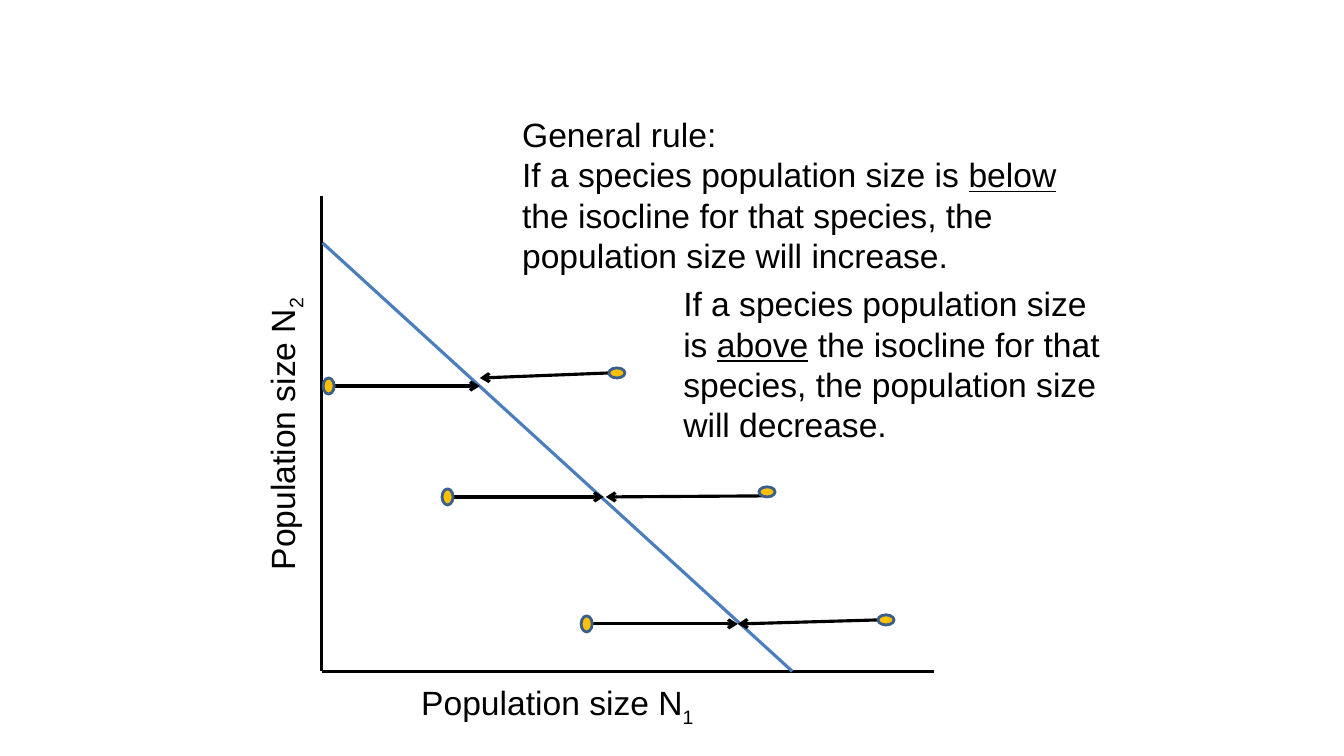
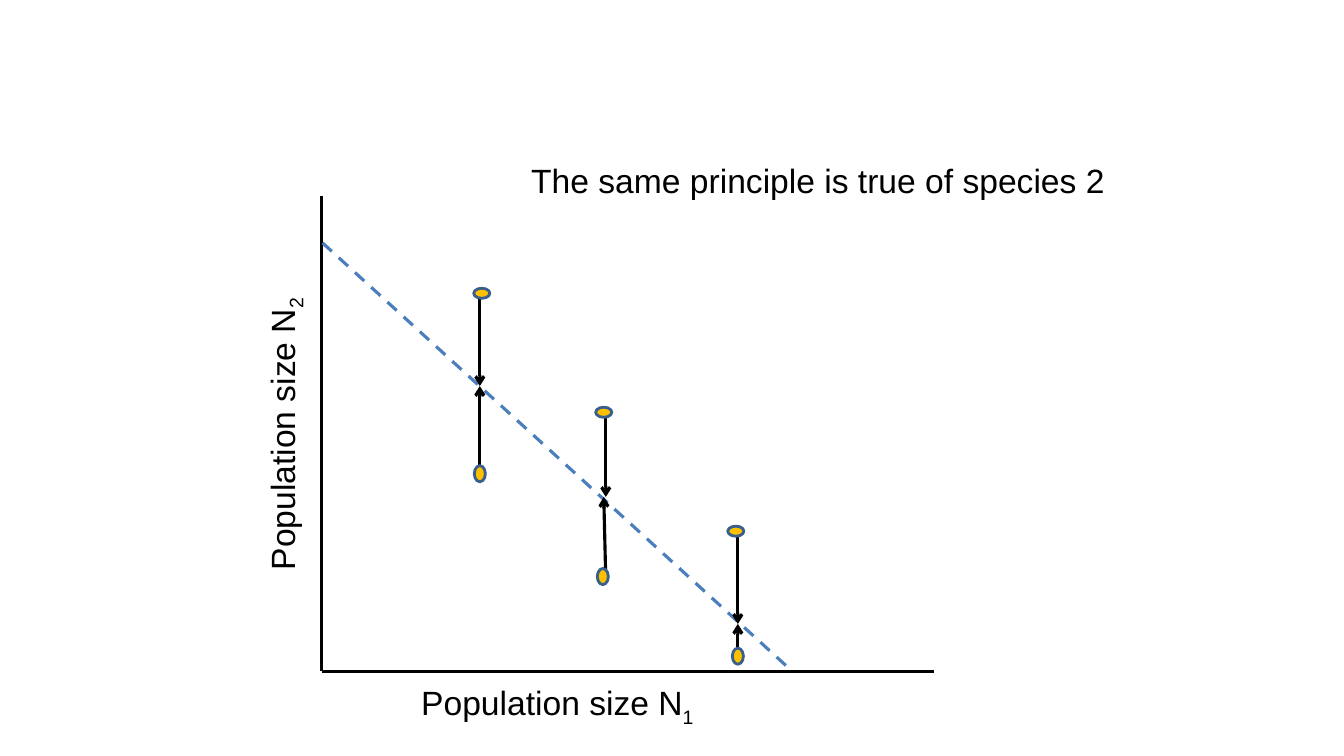
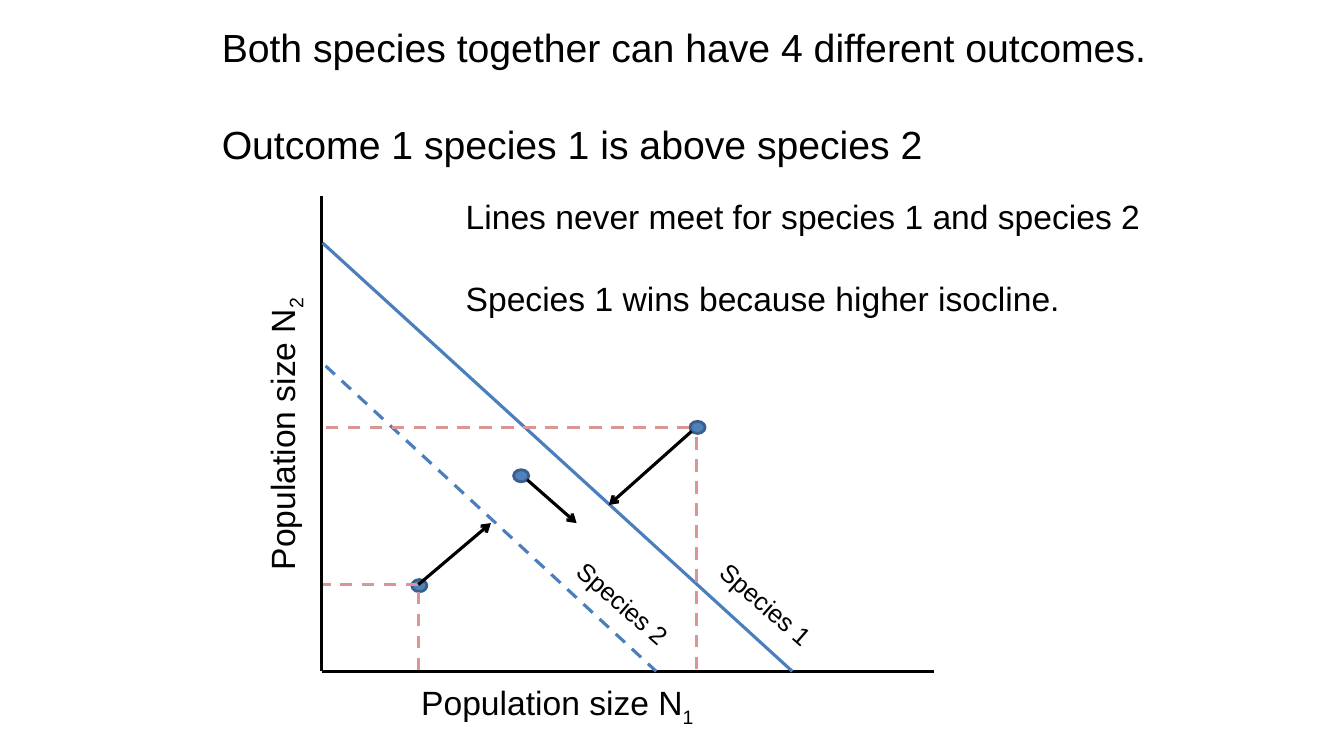
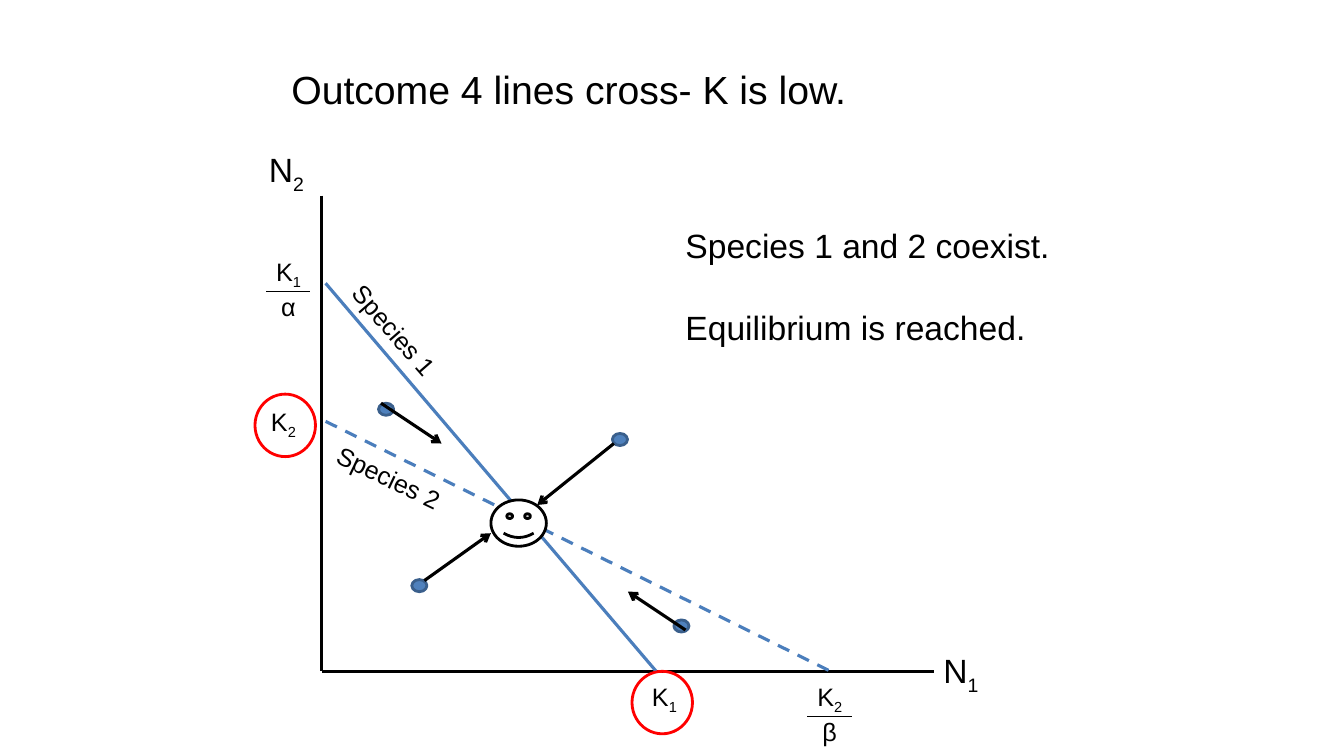
from lxml import etree
from pptx import Presentation
from pptx import util as u
from pptx.dml.color import RGBColor
from pptx.enum import dml, shapes, text
from pptx.oxml import ns

CELL = 0.1
COLUMNS, ROWS = 133.33, 75
COLORS = {
    "ink": "000000",
    "isocline": "4B7EBC",
    "guide": "D99694",
    "gold": "FFC000",
    "blue": "4F81BD",
    "outline": "3A5F8C",
    "ring": "FF0000",
    "paper": "FFFFFF",
}
DOTS = {
    "tall": (1.1, 1.6, "gold"),
    "wide": (1.6, 1, "gold"),
    "blue": (1.5, 1.2, "blue"),
}
ORIGIN = (31.9, 66.6)
AXIS_TOP, AXIS_RIGHT = 19.4, 92.7
ISOCLINE = ((32, 24.1), (78.6, 66.6))


def cells(count):
    return u.Inches(count * CELL)


def color(name):
    return RGBColor.from_string(COLORS[name])


def write(shape, paragraphs, size=24, gap=0, wrap=False):
    frame = shape.text_frame
    frame.word_wrap = wrap
    frame.auto_size = text.MSO_AUTO_SIZE.NONE
    frame.vertical_anchor = text.MSO_ANCHOR.TOP
    for index, runs in enumerate(paragraphs):
        paragraph = frame.add_paragraph() if index else frame.paragraphs[0]
        paragraph.alignment = text.PP_ALIGN.LEFT
        paragraph.space_before = u.Pt(gap if index else 0)
        for content, style in runs:
            run = paragraph.add_run()
            run.text = content
            run.font.name = "Arial"
            run.font.size = u.Pt(size)
            run.font.color.rgb = color("ink")
            if style == "underline":
                run.font.underline = True
            if style == "subscript":
                run._r.get_or_add_rPr().set("baseline", "-25000")


def plain(*lines):
    return [[(line, None)] for line in lines]


def indexed(name, number):
    return [[(name, None), (number, "subscript")]]


def rule(side, effect):
    return [[
        ("If a species population size is ", None),
        (side, "underline"),
        (f" the isocline for that species, the population size will {effect}.", None),
    ]]


class Deck:
    def __init__(self):
        self.presentation = Presentation()
        self.presentation.slide_width = cells(COLUMNS)
        self.presentation.slide_height = cells(ROWS)
        self.slide = None

    def new_slide(self, with_body=True):
        layout = self.presentation.slide_layouts[1 if with_body else 5]
        self.slide = self.presentation.slides.add_slide(layout)

    def place(self, shape, box, paragraphs, **style):
        shape.left, shape.top, shape.width, shape.height = map(cells, box)
        write(shape, paragraphs, wrap=True, **style)

    def title(self, box, paragraphs, **style):
        self.place(self.slide.shapes.title, box, paragraphs, **style)

    def body(self, box, paragraphs, **style):
        shape = self.slide.placeholders[1]
        self.place(shape, box, paragraphs, **style)
        for paragraph in shape.text_frame.paragraphs:
            properties = paragraph._p.get_or_add_pPr()
            properties.set("marL", "0")
            properties.set("indent", "0")
            etree.SubElement(properties, ns.qn("a:buNone"))

    def label(self, box, paragraphs, rotation=0, **style):
        shape = self.slide.shapes.add_textbox(*map(cells, box))
        shape.rotation = rotation
        write(shape, paragraphs, **style)

    def line(self, start, end, stroke="ink", width=2.25, dashed=False, arrow=False):
        connector = self.slide.shapes.add_connector(
            shapes.MSO_CONNECTOR.STRAIGHT, *map(cells, (*start, *end)))
        connector.line.color.rgb = color(stroke)
        connector.line.width = u.Pt(width)
        if dashed:
            connector.line.dash_style = dml.MSO_LINE.DASH
        if arrow:
            outline = connector.line._get_or_add_ln()
            etree.SubElement(outline, ns.qn("a:tailEnd"), type="arrow")
        etree.SubElement(connector._element.spPr, ns.qn("a:effectLst"))

    def arrows(self, *pairs):
        for start, end in pairs:
            self.line(start, end, arrow=True)

    def shape(self, kind, box, fill, stroke):
        shape = self.slide.shapes.add_shape(kind, *map(cells, box))
        shape.shadow.inherit = False
        if fill:
            shape.fill.solid()
            shape.fill.fore_color.rgb = color(fill)
        else:
            shape.fill.background()
        shape.line.color.rgb = color(stroke)
        shape.line.width = u.Pt(2)

    def dots(self, kind, *centers):
        width, height, fill = DOTS[kind]
        for x, y in centers:
            box = (x - width / 2, y - height / 2, width, height)
            self.shape(shapes.MSO_SHAPE.OVAL, box, fill, "outline")

    def axes(self):
        self.line((ORIGIN[0], AXIS_TOP), ORIGIN)
        self.line(ORIGIN, (AXIS_RIGHT, ORIGIN[1]))

    def population_axes(self):
        self.axes()
        self.label((13.2, 40.3, 29.5, 5), indexed("Population size N", "2"), rotation=270)
        self.label((40.8, 67.2, 29.5, 5), indexed("Population size N", "1"))

    def isocline(self, start, end, dashed=False):
        self.line(start, end, stroke="isocline", dashed=dashed)

    def species(self, number, left, top, rotation):
        self.label((left, top, 13.1, 4), plain(f"Species {number}"),
                   rotation=rotation, size=18)

    def capacity(self, number, left, top, divisor=None):
        self.label((left, top, 4.6, 4), indexed("K", number), size=18)
        if divisor:
            bar = top + 4
            self.line((left, bar), (left + 4.4, bar), width=0.75)
            self.label((left + 0.5, bar - 0.5, 3.5, 4), plain(divisor), size=18)

    def ring(self, left, top):
        self.shape(shapes.MSO_SHAPE.OVAL, (left, top, 6, 6.2), None, "ring")


def species_one_rule(deck):
    deck.new_slide()
    deck.title((50.8, 10.8, 59.9, 5), plain("General rule:"))
    deck.body((50.8, 14.8, 59.9, 13.2), rule("below", "increase"))
    deck.place(deck.slide.shapes.add_textbox(0, 0, 0, 0),
               (66.8, 27.6, 44.1, 17.2), rule("above", "decrease"))
    deck.population_axes()
    deck.isocline(*ISOCLINE)
    deck.arrows(
        ((58.3, 61.9), (73.2, 61.9)),
        ((45, 49.3), (59.9, 49.3)),
        ((32.6, 38.3), (47.6, 38.3)),
        ((60.4, 37), (47.6, 37.5)),
        ((75.6, 49.2), (60.1, 49.3)),
        ((87.1, 61.5), (73.2, 61.9)),
    )
    deck.dots("tall", (44.4, 49.3), (58.2, 61.9), (32.6, 38.3))
    deck.dots("wide", (87.9, 61.5), (76.1, 48.8), (61.2, 37))


def species_two_rule(deck):
    deck.new_slide(with_body=False)
    deck.title((51.7, 15.4, 62, 5), plain("The same principle is true of species 2"))
    deck.population_axes()
    deck.isocline(*ISOCLINE, dashed=True)
    deck.arrows(
        ((73.2, 65.1), (73.2, 61.9)),
        ((60.1, 57.6), (59.9, 49.3)),
        ((47.6, 46.9), (47.6, 38.3)),
        ((47.6, 28.8), (47.6, 38.3)),
        ((60.1, 41.4), (60.1, 49.3)),
        ((73.2, 53.2), (73.2, 61.9)),
    )
    deck.dots("tall", (59.8, 57.2), (73.2, 65.1), (47.6, 47))
    deck.dots("wide", (73, 52.7), (59.9, 40.9), (47.8, 29.1))


def outcome_one(deck):
    deck.new_slide()
    deck.title((21, 1.8, 97, 15.1),
               plain("Both species together can have 4 different outcomes.",
                     "Outcome 1 species 1 is above species 2"), size=28, gap=36)
    deck.body((45.2, 18.9, 71.5, 13.1),
              plain("Lines never meet for species 1 and species 2",
                    "Species 1 wins because higher isocline."), gap=30)
    deck.population_axes()
    deck.isocline(*ISOCLINE)
    deck.isocline((32.3, 36.3), (65.1, 66.6), dashed=True)
    deck.species(1, 69.5, 58, 41.3)
    deck.species(2, 55.3, 57.9, 41.3)
    deck.dots("blue", (41.6, 58.1), (69.2, 42.4), (51.7, 47.2))
    for start, end in (
        ((41.5, 58.7), (41.5, 66.6)),
        ((41.5, 58), (32, 58)),
        ((69.1, 43.4), (69.1, 66.6)),
        ((68.4, 42.4), (32, 42.4)),
    ):
        deck.line(start, end, stroke="guide", dashed=True)
    deck.arrows(
        ((41.5, 58), (48.7, 51.9)),
        ((68.6, 42.8), (60.4, 50.1)),
        ((52.3, 47.6), (57.2, 51.9)),
    )


def outcome_four(deck):
    deck.new_slide()
    deck.title((27.9, 6, 60, 5.7), plain("Outcome 4 lines cross- K is low."), size=28)
    deck.body((67, 21.8, 43.7, 13.1),
              plain("Species 1 and 2 coexist.", "Equilibrium is reached."), gap=30)
    deck.axes()
    deck.isocline((32.3, 41.8), (82.4, 66.6), dashed=True)
    deck.isocline((32.3, 28.1), (65.1, 66.6))
    deck.label((25.7, 14.3, 5.7, 5), indexed("N", "2"))
    deck.label((92.6, 64, 5.7, 5), indexed("N", "1"))
    deck.species(1, 32.6, 30.8, 49)
    deck.species(2, 32.1, 45.4, 25.5)
    deck.dots("blue", (41.6, 58.1), (61.5, 43.6), (38.3, 40.6), (67.6, 62.1))
    deck.capacity("2", 25.9, 39.8)
    deck.capacity("1", 63.7, 67.1)
    deck.capacity("2", 80.1, 67.1, divisor="β")
    deck.capacity("1", 26.4, 24.9, divisor="α")
    deck.arrows(
        ((60.9, 44), (53.3, 50.1)),
        ((42.1, 57.6), (48.7, 52.9)),
        ((68, 62.5), (62.3, 58.7)),
        ((37.8, 40), (43.8, 44)),
    )
    deck.ring(25.3, 39.1)
    deck.ring(62.7, 66.6)
    deck.shape(shapes.MSO_SHAPE.SMILEY_FACE, (48.7, 49.6, 5.5, 4.6), "paper", "ink")


def main():
    deck = Deck()
    for build in (species_one_rule, species_two_rule, outcome_one, outcome_four):
        build(deck)
    deck.presentation.save("out.pptx")


if __name__ == "__main__":
    main()
